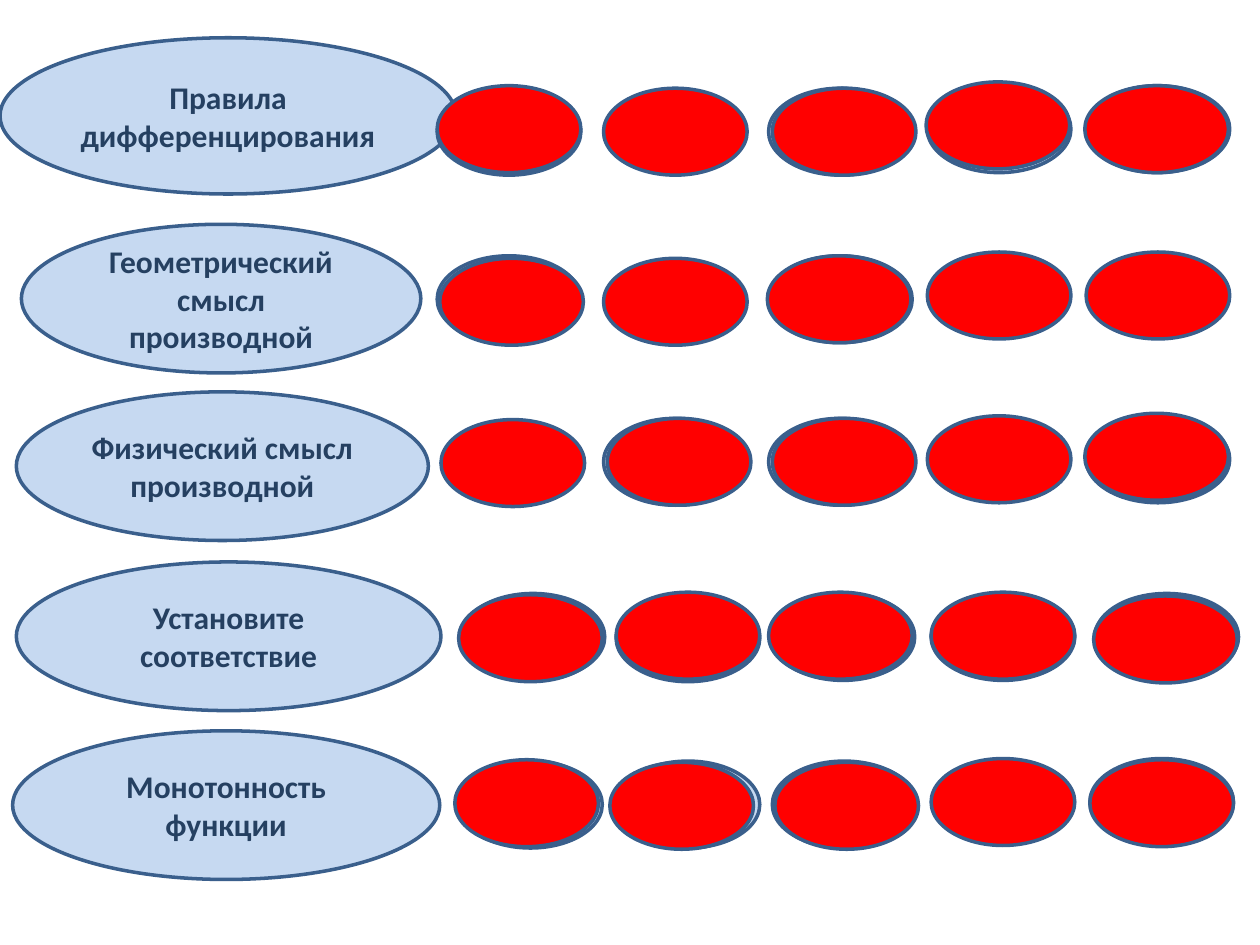
from pptx import Presentation
from pptx.dml.color import RGBColor
from pptx.enum.shapes import MSO_SHAPE
from pptx.enum.text import MSO_ANCHOR, PP_ALIGN
from pptx.util import Inches, Pt

OVAL = MSO_SHAPE.OVAL
MIDDLE = MSO_ANCHOR.MIDDLE
CENTER = PP_ALIGN.CENTER

COLORS = {"topic": "C6D9F1", "cover": "FF0000", "outline": "3A5F8C", "text": "254061"}
CELL_SIZE = (1.14, 0.69)

# Each row: topic, its box (left, top, width, height),
# the (left, top) of the question cells and of the covers over them
ROWS = [
    {"topic": "Правила дифференцирования", "box": (0, 0.3, 3.62, 1.24),
     "cells": [(3.47, 0.7), (6.1, 0.7), (7.36, 0.68), (8.62, 0.68)],
     "covers": [(3.47, 0.68), (4.79, 0.7), (6.13, 0.7), (7.35, 0.65), (8.61, 0.68)]},
    {"topic": "Геометрический смысл производной", "box": (0.17, 1.78, 3.17, 1.18),
     "cells": [(3.47, 2.03), (6.1, 2.03)],
     "covers": [(3.49, 2.05), (4.79, 2.05), (6.09, 2.03), (7.36, 2), (8.62, 2)]},
    {"topic": "Физический смысл производной", "box": (0.13, 3.11, 3.27, 1.18),
     "cells": [(4.79, 3.32), (6.1, 3.32), (8.62, 3.3)],
     "covers": [(3.5, 3.33), (4.82, 3.32), (6.13, 3.32), (7.36, 3.3), (8.61, 3.28)]},
    {"topic": "Установите соответствие", "box": (0.13, 4.46, 3.37, 1.18),
     "cells": [(3.66, 4.71), (4.89, 4.72), (6.12, 4.71), (7.39, 4.71), (8.69, 4.71)],
     "covers": [(3.64, 4.72), (4.89, 4.7), (6.1, 4.7), (7.39, 4.7), (8.68, 4.73)]},
    {"topic": "Монотонность функции", "box": (0.1, 5.8, 3.39, 1.18),
     "cells": [(3.64, 6.04), (4.89, 6.04), (6.13, 6.04), (8.65, 6.02)],
     "covers": [(3.61, 6.03), (4.84, 6.05), (6.15, 6.05), (7.39, 6.02), (8.65, 6.03)]},
]


def add_oval(slide, box, fill):
    oval = slide.shapes.add_shape(OVAL, *[Inches(length) for length in box])
    oval.shadow.inherit = False
    oval.fill.solid()
    oval.fill.fore_color.rgb = RGBColor.from_string(COLORS[fill])
    oval.line.color.rgb = RGBColor.from_string(COLORS["outline"])
    oval.line.width = Pt(2)
    return oval


def write_text(shape, text, *, size=18, color="text", bold=True, font="Calibri"):
    frame = shape.text_frame
    frame.word_wrap = True
    frame.vertical_anchor = MIDDLE
    paragraph = frame.paragraphs[0]
    paragraph.alignment = CENTER
    run = paragraph.add_run()
    run.text = text
    run.font.name = font
    run.font.size = Pt(size)
    run.font.bold = bold
    run.font.color.rgb = RGBColor.from_string(COLORS[color])


def main():
    deck = Presentation()
    deck.slide_width, deck.slide_height = Inches(10), Inches(7.5)
    slide = deck.slides.add_slide(deck.slide_layouts[6])

    # Topics
    for row in ROWS:
        write_text(add_oval(slide, row["box"], "topic"), row["topic"])

    # Question cells, then the red covers on top
    for layer, fill in (("cells", "topic"), ("covers", "cover")):
        for row in ROWS:
            for position in row[layer]:
                add_oval(slide, position + CELL_SIZE, fill)

    deck.save("out.pptx")


if __name__ == "__main__":
    main()
